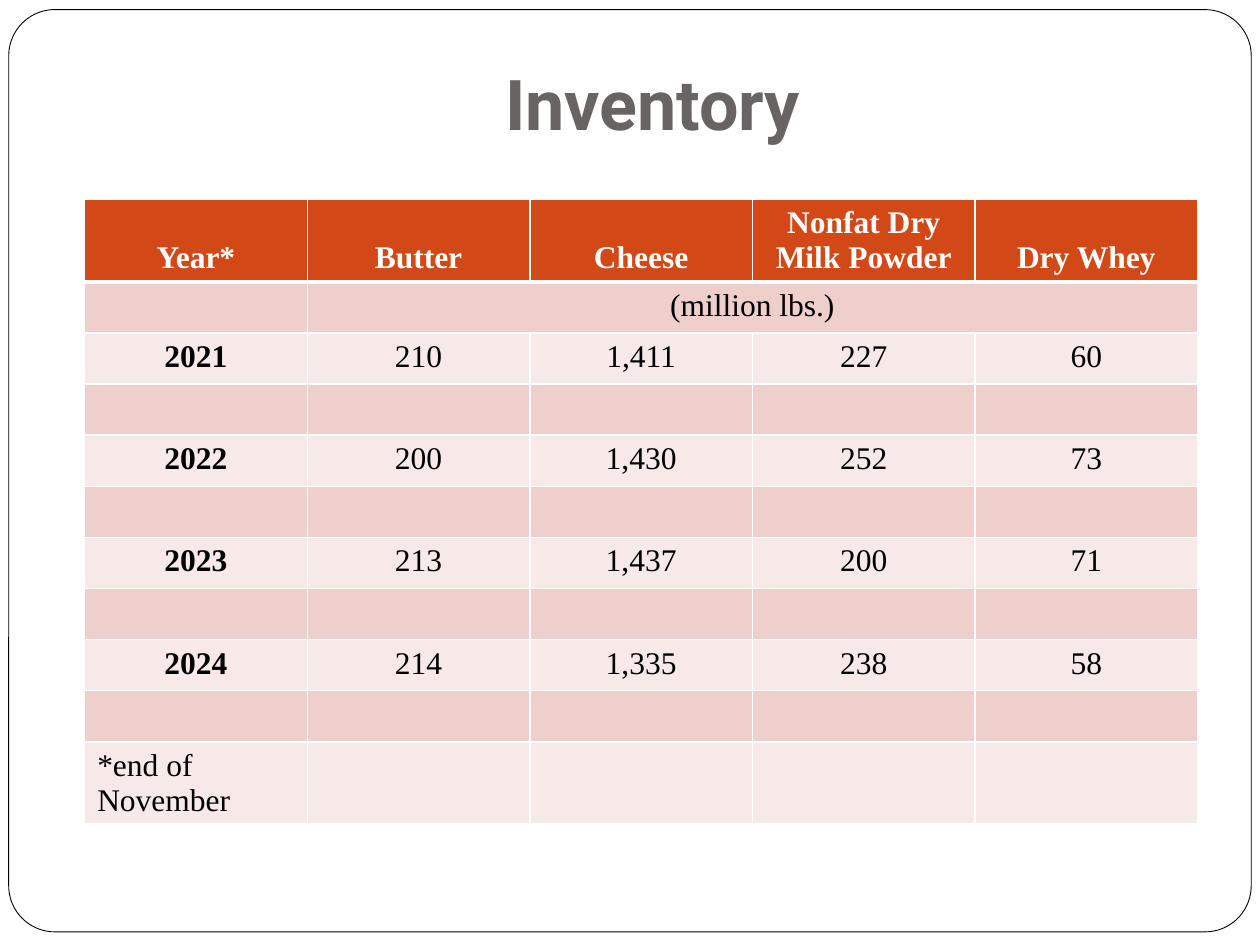
"""Build a one-slide table of year-end dairy inventories."""
from dataclasses import dataclass

from lxml import etree
from pptx import Presentation
from pptx.dml.color import RGBColor
from pptx.enum import shapes, text
from pptx.oxml import ns
from pptx.util import Pt


@dataclass(frozen=True)
class Theme:
    title_font: str = "Roboto"
    body_font: str = "Times New Roman"
    title_size: int = 40
    body_size: int = 18
    title: str = "696464"
    header: str = "D34817"
    band_dark: str = "EFCFCC"
    band_light: str = "F7E9E8"
    white: str = "FFFFFF"
    black: str = "000000"


THEME = Theme()
HEADERS = ["Year*", "Butter", "Cheese", "Nonfat Dry Milk Powder", "Dry Whey"]
INVENTORY = [
    ["2021", "210", "1,411", "227", "60"],
    ["2022", "200", "1,430", "252", "73"],
    ["2023", "213", "1,437", "200", "71"],
    ["2024", "214", "1,335", "238", "58"],
]
COL_WIDTH, ROW_HEIGHT, TALL_ROW = 127.2, 29.2, 46.8


def rgb(color):
    return RGBColor.from_string(color)


def style_font(font, name, size, color, bold):
    font.name, font.size, font.bold = name, Pt(size), bold
    font.color.rgb = rgb(color)


def add_frame(slide):
    sp = slide.shapes.add_shape(shapes.MSO_SHAPE.ROUNDED_RECTANGLE,
                                Pt(5), Pt(5.5), Pt(710), Pt(527))
    sp.adjustments[0] = 0.05
    sp.shadow.inherit = False
    sp.fill.solid()
    sp.fill.fore_color.rgb = rgb(THEME.white)
    sp.line.color.rgb = rgb(THEME.black)
    sp.line.width = Pt(0.5)
    slide.shapes._spTree.insert(2, sp._element)


def set_title(slide, wording):
    sp = slide.shapes.title
    sp.left, sp.top, sp.width, sp.height = Pt(72), Pt(21.6), Pt(612), Pt(68.4)
    tf = sp.text_frame
    tf.text = wording
    tf.vertical_anchor = text.MSO_ANCHOR.BOTTOM
    tf.margin_bottom = Pt(7.2)
    p = tf.paragraphs[0]
    p.alignment = text.PP_ALIGN.CENTER
    style_font(p.runs[0].font, THEME.title_font, THEME.title_size, THEME.title, True)


def set_borders(cell, top, bottom):
    tc_pr = cell._tc.get_or_add_tcPr()
    for side, width in (("L", 1), ("R", 1), ("T", top), ("B", bottom)):
        ln = etree.SubElement(tc_pr, ns.qn(f"a:ln{side}"), w=str(Pt(width)))
        fill = etree.SubElement(ln, ns.qn("a:solidFill"))
        etree.SubElement(fill, ns.qn("a:srgbClr"), val=THEME.white)


def set_cell(cell, wording, fill, color, bold, align):
    cell.fill.solid()
    cell.fill.fore_color.rgb = rgb(fill)
    p = cell.text_frame.paragraphs[0]
    p.text = wording
    p.alignment = align
    for r in p.runs:
        style_font(r.font, THEME.body_font, THEME.body_size, color, bold)


def table_rows():
    blank = [""] * len(HEADERS)
    rows = [HEADERS, ["", "(million lbs.)", "", "", ""]]
    for record in INVENTORY:
        rows += [record, blank]
    return rows + [["*end of November"] + blank[1:]]


def add_inventory_table(slide):
    rows = table_rows()
    last = len(rows) - 1
    heights = [TALL_ROW] + [ROW_HEIGHT] * (last - 1) + [TALL_ROW]
    table = slide.shapes.add_table(len(rows), len(HEADERS), Pt(48.4), Pt(114),
                                   Pt(COL_WIDTH * len(HEADERS)), Pt(sum(heights))).table
    for column in table.columns:
        column.width = Pt(COL_WIDTH)
    for i, row in enumerate(rows):
        table.rows[i].height = Pt(heights[i])
        header = i == 0
        band = THEME.band_dark if i % 2 else THEME.band_light
        align = text.PP_ALIGN.LEFT if i == last else text.PP_ALIGN.CENTER
        for j, wording in enumerate(row):
            cell = table.cell(i, j)
            set_borders(cell, 3 if i == 1 else 1, 3 if header else 1)
            set_cell(cell, wording, THEME.header if header else band,
                     THEME.white if header else THEME.black,
                     header or (j == 0 and i < last), align)
            if header:
                cell.vertical_anchor = text.MSO_ANCHOR.BOTTOM
    table.cell(1, 1).merge(table.cell(1, len(HEADERS) - 1))


def main():
    prs = Presentation()
    prs.slide_width, prs.slide_height = Pt(720), Pt(540)
    slide = prs.slides.add_slide(prs.slide_layouts[5])
    add_frame(slide)
    set_title(slide, "Inventory ")
    add_inventory_table(slide)
    prs.save("out.pptx")


if __name__ == "__main__":
    main()
